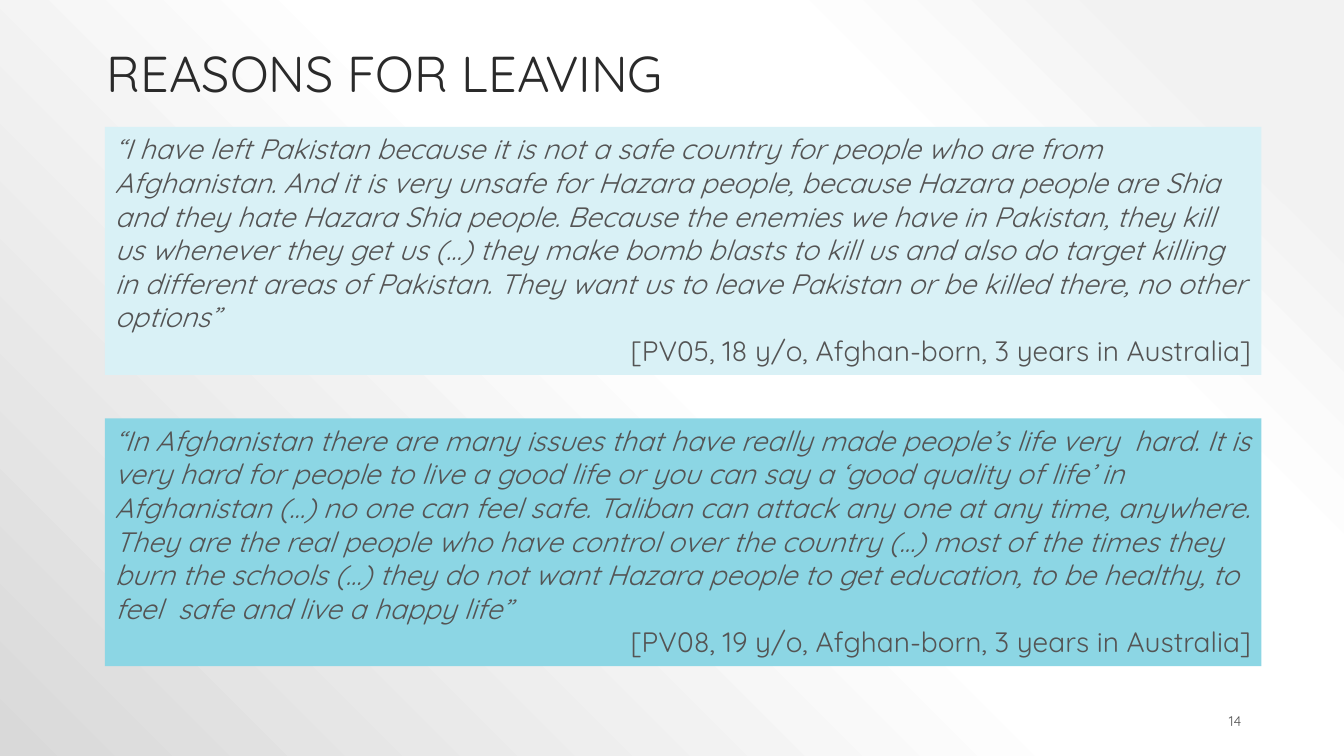
from pptx import Presentation
from pptx.dml.color import RGBColor
from pptx.enum.shapes import MSO_SHAPE
from pptx.enum.text import MSO_ANCHOR as Anchor, MSO_AUTO_SIZE as AutoSize, PP_ALIGN as Align
from pptx.oxml import parse_xml
from pptx.util import Inches, Pt

FONT = "Quicksand"
COLORS = {"title": "2A2A2A", "text": "545454", "pale": "D9F1F6", "teal": "8CD6E4"}
BACKGROUND_STOPS = [(10, "F2F2F2"), (28, "FFFFFF"), (48, "FFFFFF"), (100, "D9D9D9")]
TITLE = "REASONS FOR LEAVING"
PAGE_NUMBER = "14"
QUOTES = [
    ("pale",
     "“I have left Pakistan because it is not a safe country for people who are from "
     "Afghanistan. And it is very unsafe for Hazara people, because Hazara people are Shia "
     "and they hate Hazara Shia people. Because the enemies we have in Pakistan, they kill "
     "us whenever they get us (…) they make bomb blasts to kill us and also do target killing "
     "in different areas of Pakistan. They want us to leave Pakistan or be killed there, "
     "no other options”",
     "[PV05, 18 y/o, Afghan-born, 3 years in Australia]"),
    ("teal",
     "“In Afghanistan there are many issues that have really made people’s life very  hard. "
     "It is very hard for people to live a good life or you can say a ‘good quality of life’ in "
     "Afghanistan (…) no one can feel safe. Taliban can attack any one at any time, anywhere. "
     "They are the real people who have control over the country (…) most of the times they "
     "burn the schools (…) they do not want Hazara people to get education, to be healthy, to "
     "feel  safe and live a happy life”",
     "[PV08, 19 y/o, Afghan-born, 3 years in Australia]"),
]
QUOTE_LEFT, QUOTE_TOP, QUOTE_WIDTH, QUOTE_HEIGHT = 1.04, 1.26, 11.47, 2.46
QUOTE_STEP = 2.89


def color(name):
    return RGBColor.from_string(COLORS[name])


def format_paragraph(paragraph, size, color_name, align=Align.LEFT, italic=False):
    paragraph.alignment = align
    for run in paragraph.runs:
        run.font.name = FONT
        run.font.size = Pt(size)
        run.font.italic = italic
        run.font.color.rgb = color(color_name)


def set_background(slide):
    slide.background.fill.solid()
    solid = slide.background._cSld.bg.bgPr[0]
    stops = "".join(
        f'<a:gs pos="{position * 1000}"><a:srgbClr val="{value}"/></a:gs>'
        for position, value in BACKGROUND_STOPS)
    gradient = parse_xml(
        '<a:gradFill xmlns:a="http://schemas.openxmlformats.org/drawingml/2006/main" '
        f'rotWithShape="1"><a:gsLst>{stops}</a:gsLst><a:path path="circle">'
        '<a:fillToRect l="100000" b="100000"/></a:path></a:gradFill>')
    solid.getparent().replace(solid, gradient)


def add_title(slide):
    title = slide.shapes.title
    title.left, title.top = Inches(0.96), Inches(0.24)
    title.width, title.height = Inches(11.5), Inches(0.84)
    frame = title.text_frame
    frame.text = TITLE
    frame.auto_size = AutoSize.NONE
    frame.vertical_anchor = Anchor.BOTTOM
    frame.paragraphs[0].line_spacing = 0.9
    format_paragraph(frame.paragraphs[0], 36, "title")


def add_quote(slide, index, fill, quote, speaker):
    box = slide.shapes.add_shape(
        MSO_SHAPE.RECTANGLE, Inches(QUOTE_LEFT), Inches(QUOTE_TOP + index * QUOTE_STEP),
        Inches(QUOTE_WIDTH), Inches(QUOTE_HEIGHT))
    box.shadow.inherit = False
    box.fill.solid()
    box.fill.fore_color.rgb = color(fill)
    box.line.fill.background()
    frame = box.text_frame
    frame.word_wrap = True
    frame.auto_size = AutoSize.SHAPE_TO_FIT_TEXT
    frame.vertical_anchor = Anchor.TOP
    frame.text = f"{quote}\n{speaker}"
    format_paragraph(frame.paragraphs[0], 20, "text", italic=True)
    format_paragraph(frame.paragraphs[1], 20, "text", Align.RIGHT)


def add_page_number(slide):
    box = slide.shapes.add_textbox(Inches(8.83), Inches(6.95), Inches(3.58), Inches(0.4))
    frame = box.text_frame
    frame.word_wrap = True
    frame.vertical_anchor = Anchor.MIDDLE
    frame.text = PAGE_NUMBER
    format_paragraph(frame.paragraphs[0], 10, "text", Align.RIGHT)


def main():
    presentation = Presentation()
    presentation.slide_width, presentation.slide_height = Inches(13.33), Inches(7.5)
    slide = presentation.slides.add_slide(presentation.slide_layouts[5])
    set_background(slide)
    add_title(slide)
    for index, (fill, quote, speaker) in enumerate(QUOTES):
        add_quote(slide, index, fill, quote, speaker)
    add_page_number(slide)
    presentation.save("out.pptx")


if __name__ == "__main__":
    main()
